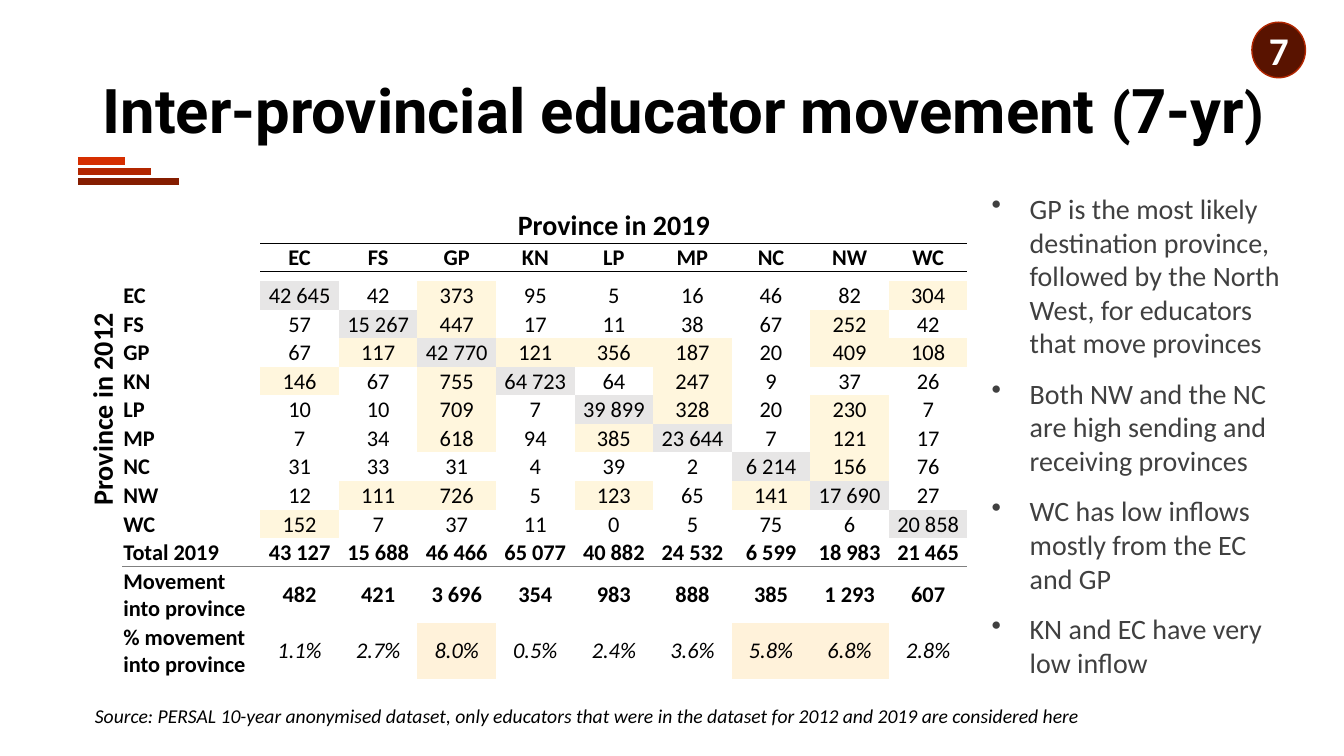
import dataclasses

import lxml.etree
import pptx
import pptx.dml.color
import pptx.enum.shapes
import pptx.enum.text
import pptx.oxml.ns
import pptx.util

Cm = pptx.util.Cm
Pt = pptx.util.Pt
Align = pptx.enum.text.PP_ALIGN
Anchor = pptx.enum.text.MSO_ANCHOR
qn = pptx.oxml.ns.qn

HUES = {
    "black": "000000", "white": "FFFFFF", "text": "404040", "rule": "808080",
    "dark": "851D00", "mid": "B22600", "light": "D62E00", "badge": "591300",
    "stay": "E7E6E6", "move": "FFF6DD", "share": "FFF2DA",
}
NO_STYLE = "{2D5ABB26-0587-4C30-8999-92F81FD0307C}"
CODES = ["EC", "FS", "GP", "KN", "LP", "MP", "NC", "NW", "WC"]
MOVES = [
    [42645, 42, 373, 95, 5, 16, 46, 82, 304],
    [57, 15267, 447, 17, 11, 38, 67, 252, 42],
    [67, 117, 42770, 121, 356, 187, 20, 409, 108],
    [146, 67, 755, 64723, 64, 247, 9, 37, 26],
    [10, 10, 709, 7, 39899, 328, 20, 230, 7],
    [7, 34, 618, 94, 385, 23644, 7, 121, 17],
    [31, 33, 31, 4, 39, 2, 6214, 156, 76],
    [12, 111, 726, 5, 123, 65, 141, 17690, 27],
    [152, 7, 37, 11, 0, 5, 75, 6, 20858],
]
POINTS = [
    "GP is the most likely destination province, followed by the North West, "
    "for educators that move provinces",
    "Both NW and the NC are high sending and receiving provinces",
    "WC has low inflows mostly from the EC and GP",
    "KN and EC have very low inflow",
]


@dataclasses.dataclass
class Box:
    """Place and size in centimetres."""
    left: float
    top: float
    width: float
    height: float

    def lengths(self) -> list:
        """Give the four lengths."""
        return [Cm(n) for n in (self.left, self.top, self.width, self.height)]


@dataclasses.dataclass
class Bar:
    """One accent bar under the title."""
    top: float
    width: float
    hue: str


BARS = [Bar(4.57, 2.54, "dark"), Bar(4.32, 1.85, "mid"), Bar(4.06, 1.19, "light")]


def paint(hue: str) -> pptx.dml.color.RGBColor:
    """Turn a colour name into a colour."""
    return pptx.dml.color.RGBColor.from_string(HUES[hue])


def write(par, text: str, size: float = 16, font: str = "Calibri", hue: str = "black",
          bold: bool = False, slant: bool = False, align=Align.LEFT) -> None:
    """Add a run of formatted text to a paragraph."""
    par.alignment = align
    run = par.add_run()
    run.text = text
    run.font.size, run.font.name = Pt(size), font
    run.font.bold, run.font.italic = bold, slant
    run.font.color.rgb = paint(hue)


def frame(slide, box: Box, anchor=Anchor.MIDDLE):
    """Add a wrapping text box and give its frame."""
    area = slide.shapes.add_textbox(*box.lengths()).text_frame
    area.word_wrap = True
    area.vertical_anchor = anchor
    return area


def draw_bar(slide, bar: Bar) -> None:
    """Draw an accent bar as a thick line."""
    line = slide.shapes.add_connector(
        pptx.enum.shapes.MSO_CONNECTOR.STRAIGHT,
        Cm(1.96), Cm(bar.top), Cm(1.96 + bar.width), Cm(bar.top))
    line.line.color.rgb = paint(bar.hue)
    line.line.width = Pt(5.5)
    lxml.etree.SubElement(line._element.spPr, qn("a:effectLst"))


def draw_badge(slide, text: str) -> None:
    """Draw the round page number."""
    disc = slide.shapes.add_shape(pptx.enum.shapes.MSO_SHAPE.OVAL,
                                  *Box(31.55, 0.56, 1.35, 1.4).lengths())
    disc.shadow.inherit = False
    disc.fill.solid()
    disc.fill.fore_color.rgb = paint("badge")
    disc.line.color.rgb = paint("mid")
    disc.line.width = Pt(1)
    area = disc.text_frame
    area.margin_left = area.margin_right = area.margin_top = area.margin_bottom = 0
    area.vertical_anchor = Anchor.MIDDLE
    write(area.paragraphs[0], text, size=28, hue="white", bold=True, align=Align.CENTER)


def list_points(slide) -> None:
    """Write the bulleted remarks."""
    area = frame(slide, Box(24.74, 4.7, 7.85, 12.5), Anchor.TOP)
    for spot, point in enumerate(POINTS):
        par = area.add_paragraph() if spot else area.paragraphs[0]
        write(par, point, size=20, hue="text")
        par.space_after = Pt(12)
        props = par._p.get_or_add_pPr()
        props.set("marL", str(Cm(0.96)))
        props.set("indent", str(-Cm(0.96)))
        lxml.etree.SubElement(props, qn("a:buChar")).set("char", "•")


def edge(cell, side: str, hue: str, width: float) -> None:
    """Rule one side of a cell."""
    line = lxml.etree.Element(qn(f"a:ln{side}"), w=str(Pt(width)))
    fill = lxml.etree.SubElement(line, qn("a:solidFill"))
    lxml.etree.SubElement(fill, qn("a:srgbClr"), val=HUES[hue])
    cell._tc.get_or_add_tcPr().insert(0, line)


def fill_cell(cell, text: str, shade: str = "", **style) -> None:
    """Write and shade a cell."""
    if shade:
        cell.fill.solid()
        cell.fill.fore_color.rgb = paint(shade)
    write(cell.text_frame.paragraphs[0], text, **style)


def fill_row(grid, row: int, label: str, texts: list, shades: list, **style) -> None:
    """Fill one row of the table."""
    if label:
        fill_cell(grid.cell(row, 1), label, bold=True)
    for col, (text, shade) in enumerate(zip(texts, shades), 2):
        fill_cell(grid.cell(row, col), text, shade, align=Align.CENTER, **style)


def spaced(nums: list) -> list:
    """Group thousands with a space."""
    return [f"{num:,}".replace(",", " ") for num in nums]


def make_grid(slide):
    """Add a bare table with its sizes set."""
    widths = [0.94, 3.48] + [1.98] * 9
    heights = [0.89, 0.71, 0.25] + [0.72] * 10 + [1.41] * 2
    box = Box(2.14, 5.23, sum(widths), sum(heights))
    grid = slide.shapes.add_table(len(heights), len(widths), *box.lengths()).table
    grid.first_row = grid.horz_banding = False
    grid._tbl.tblPr.find(qn("a:tableStyleId")).text = NO_STYLE
    for col, width in zip(grid.columns, widths):
        col.width = Cm(width)
    for row, height in zip(grid.rows, heights):
        row.height = Cm(height)
    for cell in grid.iter_cells():
        cell.fill.background()
        cell.margin_left = cell.margin_right = cell.margin_top = Cm(0.03)
        cell.margin_bottom = 0
        cell.vertical_anchor = Anchor.MIDDLE
        cell.text_frame.paragraphs[0]._p.get_or_add_endParaRPr().set("sz", "100")
    return grid


def draw_table(slide) -> None:
    """Draw the table of moves between provinces."""
    grid = make_grid(slide)
    plain = [""] * len(CODES)
    grid.cell(0, 2).merge(grid.cell(0, 10))
    grid.cell(3, 0).merge(grid.cell(11, 0))
    grid.cell(3, 0)._tc.get_or_add_tcPr().set("vert", "vert270")
    for cell, year in ((grid.cell(0, 2), 2019), (grid.cell(3, 0), 2012)):
        fill_cell(cell, f"Province in {year}", size=20, bold=True, align=Align.CENTER)
    grid.cell(0, 2).vertical_anchor = Anchor.BOTTOM
    fill_row(grid, 1, "", CODES, plain, bold=True)
    for spot, (code, nums) in enumerate(zip(CODES, MOVES)):
        shades = ["move" if num > 100 else "" for num in nums]
        shades[spot] = "stay"
        fill_row(grid, 3 + spot, code, spaced(nums), shades)
    sums = [sum(nums) for nums in zip(*MOVES)]
    gains = [total - MOVES[spot][spot] for spot, total in enumerate(sums)]
    rates = [gain / total for gain, total in zip(gains, sums)]
    fill_row(grid, 12, "Total 2019", spaced(sums), plain, bold=True)
    fill_row(grid, 13, "Movement into province", spaced(gains), plain, bold=True)
    fill_row(grid, 14, "% movement into province", [f"{rate:.1%}" for rate in rates],
             ["share" if rate > 0.05 else "" for rate in rates], slant=True)
    for col in range(2, 11):
        edge(grid.cell(1, col), "B", "black", 0.5)
        edge(grid.cell(1, col), "T", "black", 0.5)
    for col in range(1, 11):
        edge(grid.cell(12, col), "B", "rule", 1)


def main() -> None:
    """Build and save the slide."""
    deck = pptx.Presentation()
    deck.slide_width, deck.slide_height = Cm(33.87), Cm(19.05)
    slide = deck.slides.add_slide(deck.slide_layouts[6])
    for bar in BARS:
        draw_bar(slide, bar)
    title = frame(slide, Box(2.34, 1.02, 30.25, 3.68)).paragraphs[0]
    title.line_spacing = 0.9
    for text, size in (("Inter-provincial educator movement ", 44), ("(", 40),
                       ("7-yr", 44), (")", 40)):
        write(title, text, size=size, font="Roboto", bold=True)
    list_points(slide)
    source = frame(slide, Box(2.14, 17.58, 25.73, 0.89)).paragraphs[0]
    write(source, "Source: PERSAL 10-year anonymised dataset, only educators that were "
          "in the dataset for 2012 and 2019 are considered here", size=14, slant=True)
    draw_badge(slide, "7")
    draw_table(slide)
    deck.save("out.pptx")


if __name__ == "__main__":
    main()
